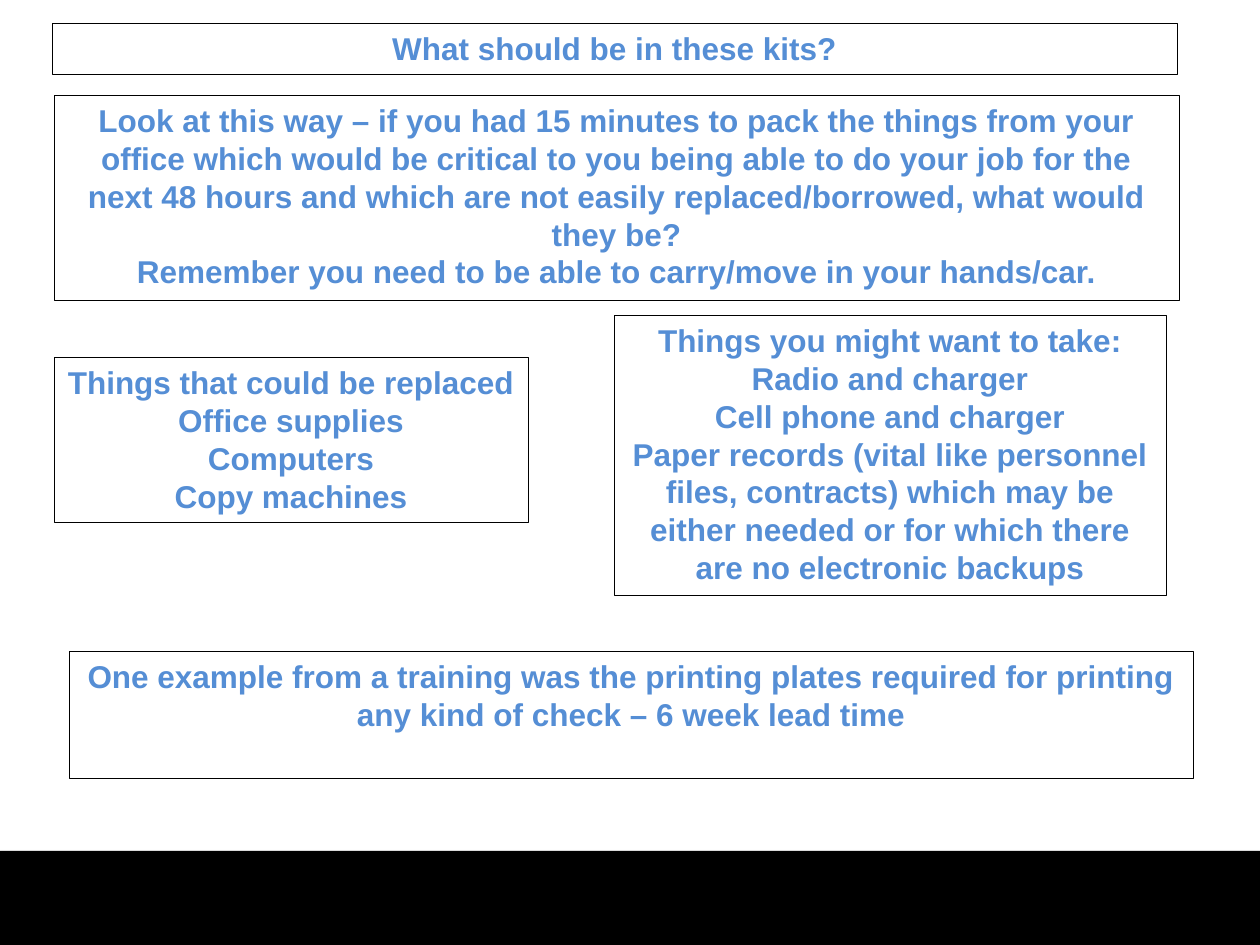
"""Build the slide on what to pack in an emergency office kit."""
from lxml import etree
from pptx import Presentation
from pptx import util as u
from pptx.dml.color import RGBColor
from pptx.enum import shapes, text
from pptx.oxml.ns import qn

PX = u.Inches(1) // 126
BLUE, BLACK = "558ED5", "000000"

TITLE = ((52, 23, 1125, 51), ["What should be in these kits?"])
BOXES = [
    ((54, 95, 1125, 205), [
        "Look at this way – if you had 15 minutes to pack the things from your office "
        "which would be critical to you being able to do your job for the next 48 hours "
        "and which are not easily replaced/borrowed, what would they be?",
        "Remember you need to be able to carry/move in your hands/car."]),
    ((54, 357, 474, 165), [
        "Things that could be replaced", "Office supplies", "Computers", "Copy machines"]),
    ((69, 651, 1124, 127), [
        "One example from a training was the printing plates required for printing "
        "any kind of check – 6 week lead time"]),
    ((614, 315, 552, 280), [
        "Things you might want to take:", "Radio and charger", "Cell phone and charger",
        "Paper records (vital like personnel files, contracts) which may be either needed "
        "or for which there are no electronic backups"]),
]
BAND = (0, 851, 1260, 94)


def color(value):
    return RGBColor.from_string(value)


def emu(place):
    return [length * PX for length in place]


def fill_box(box, place, lines):
    box.left, box.top, box.width, box.height = emu(place)
    box.line.color.rgb = color(BLACK)
    box.line.width = u.Pt(0.25)
    frame = box.text_frame
    frame.word_wrap = True
    frame.auto_size = text.MSO_AUTO_SIZE.NONE
    frame.vertical_anchor = text.MSO_ANCHOR.TOP
    for index, line in enumerate(lines):
        paragraph = frame.add_paragraph() if index else frame.paragraphs[0]
        paragraph.alignment = text.PP_ALIGN.CENTER
        run = paragraph.add_run()
        run.text = line
        run.font.name, run.font.size, run.font.bold = "Arial", u.Pt(18), True
        run.font.color.rgb = color(BLUE)


def add_band(slide):
    band = slide.shapes.add_shape(shapes.MSO_SHAPE.RECTANGLE, *emu(BAND))
    band.fill.solid()
    band.fill.fore_color.rgb = color(BLACK)
    band.line.fill.background()
    band.shadow.inherit = False
    effects = band.element.spPr.find(qn("a:effectLst"))
    shadow = etree.SubElement(effects, qn("a:outerShdw"), blurRad=str(u.Pt(3.1)),
                              dist=str(u.Pt(1.8)), dir="5400000", rotWithShape="0")
    tint = etree.SubElement(shadow, qn("a:srgbClr"), val=BLACK)
    etree.SubElement(tint, qn("a:alpha"), val="35000")


def main():
    deck = Presentation()
    deck.slide_width, deck.slide_height = u.Inches(10), u.Inches(7.5)
    slide = deck.slides.add_slide(deck.slide_layouts[5])
    add_band(slide)
    fill_box(slide.shapes.title, *TITLE)
    for place, lines in BOXES:
        fill_box(slide.shapes.add_textbox(*emu(place)), place, lines)
    deck.save("out.pptx")


if __name__ == "__main__":
    main()
